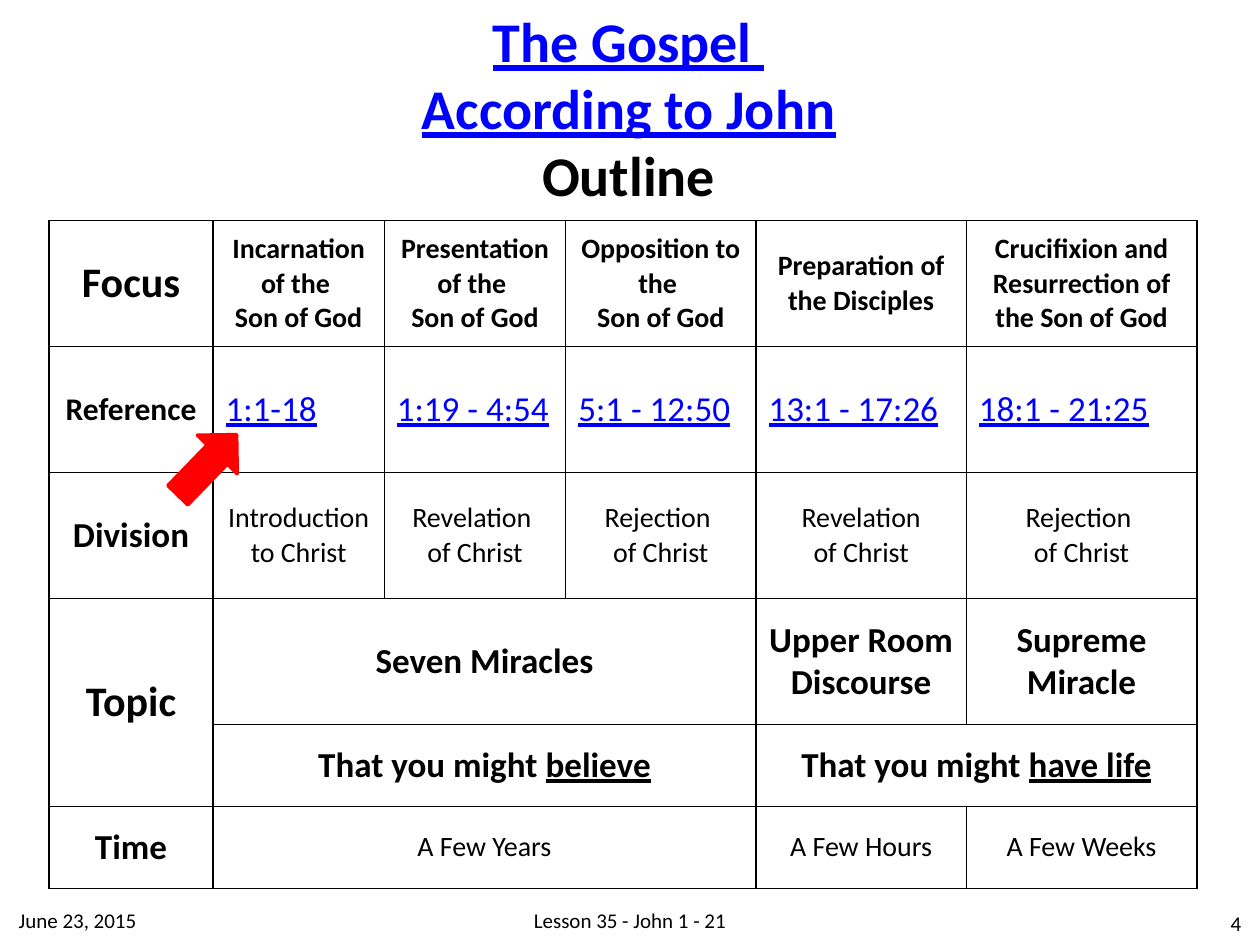
from lxml import etree
from pptx import Presentation
from pptx.dml.color import RGBColor
from pptx.enum.shapes import MSO_SHAPE as Shape
from pptx.enum.text import MSO_ANCHOR as Anchor, PP_ALIGN as Align
from pptx.oxml.ns import qn
from pptx.util import Inches, Pt

COLORS = {"text": "000000", "link": "0000FF", "border": "000000", "arrow": "FF0000"}
FONT = "Calibri"

TITLE = [("The Gospel ", "link"), ("According to John", "link"), ("Outline", "text")]

COLUMN_WIDTHS = [1.3, 1.36, 1.44, 1.51, 1.67, 1.83]
ROW_HEIGHTS = [1, 1, 1, 1, 0.65, 0.65]

ROW_LABELS = [(0, "Focus", 24), (1, "Reference", 18), (2, "Division", 20),
              (3, "Topic", 24), (5, "Time", 20)]
FOCUS = ["Incarnation of the \nSon of God", "Presentation of the \nSon of God",
         "Opposition to the \nSon of God", "Preparation of the Disciples",
         "Crucifixion and Resurrection of the Son of God"]
REFERENCES = ["1:1-18", "1:19 - 4:54", "5:1 - 12:50", "13:1 - 17:26", "18:1 - 21:25"]
DIVISIONS = ["Introduction to Christ", "Revelation \nof Christ", "Rejection \nof Christ",
             "Revelation\nof Christ", "Rejection \nof Christ"]
TOPICS = [(1, "Seven Miracles"), (4, "Upper Room Discourse"), (5, "Supreme Miracle")]
PURPOSES = [(1, "believe"), (4, "have life")]
TIMES = [(1, "A Few Years"), (4, "A Few Hours"), (5, "A Few Weeks")]
MERGES = [((3, 0), (4, 0)), ((3, 1), (3, 3)), ((4, 1), (4, 3)),
          ((4, 4), (4, 5)), ((5, 1), (5, 3))]

FOOTER = [("4", 9.2, 7.13, 0.75, Align.RIGHT),
          ("Lesson 35 - John 1 - 21", 1.71, 7.1, 6.58, Align.CENTER),
          ("June 23, 2015", 0.05, 7.1, 2.03, Align.LEFT)]


def color(name):
    return RGBColor.from_string(COLORS[name])


def format_run(run, size, bold=False, name="text", underline=False):
    font = run.font
    font.name, font.size, font.bold, font.underline = FONT, Pt(size), bold, underline
    font.color.rgb = color(name)


def write_cell(row, column, text, size, bold=False, name="text", align=Align.CENTER):
    text_frame = table.cell(row, column).text_frame
    text_frame.text = text
    for paragraph in text_frame.paragraphs:
        paragraph.alignment = align
        for run in paragraph.runs:
            format_run(run, size, bold, name, underline=name == "link")


def style_cell(cell):
    cell.vertical_anchor = Anchor.MIDDLE
    properties = cell._tc.get_or_add_tcPr()
    for side in ("lnL", "lnR", "lnT", "lnB"):
        line = etree.SubElement(properties, qn(f"a:{side}"), w=str(Pt(1)))
        fill = etree.SubElement(line, qn("a:solidFill"))
        etree.SubElement(fill, qn("a:srgbClr"), val=COLORS["border"])
    cell.fill.background()


presentation = Presentation()
presentation.slide_width, presentation.slide_height = Inches(10), Inches(7.5)
slide = presentation.slides.add_slide(presentation.slide_layouts[6])

title = slide.shapes.add_textbox(Inches(3.18), 0, Inches(3.62), Inches(1.72)).text_frame
title.word_wrap = False
title.text = "\n".join(text for text, _ in TITLE)
for paragraph, (_, name) in zip(title.paragraphs, TITLE):
    paragraph.alignment = Align.CENTER
    format_run(paragraph.runs[0], 32, True, name, underline=name == "link")

table = slide.shapes.add_table(
    len(ROW_HEIGHTS), len(COLUMN_WIDTHS), Inches(0.39), Inches(1.75),
    Inches(sum(COLUMN_WIDTHS)), Inches(sum(ROW_HEIGHTS))).table
table.first_row = table.horz_banding = False
for column, width in zip(table.columns, COLUMN_WIDTHS):
    column.width = Inches(width)
for row, height in zip(table.rows, ROW_HEIGHTS):
    row.height = Inches(height)
for cell in table.iter_cells():
    style_cell(cell)
for (top, left), (bottom, right) in MERGES:
    table.cell(top, left).merge(table.cell(bottom, right))

for row, text, size in ROW_LABELS:
    write_cell(row, 0, text, size, bold=True)
for column, (focus, reference, division) in enumerate(zip(FOCUS, REFERENCES, DIVISIONS), 1):
    write_cell(0, column, focus, 16, bold=True)
    write_cell(1, column, reference, 20, name="link", align=Align.LEFT)
    write_cell(2, column, division, 16)
for column, text in TOPICS:
    write_cell(3, column, text, 20, bold=True)
for column, text in PURPOSES:
    write_cell(4, column, "That you might ", 20, bold=True)
    run = table.cell(4, column).text_frame.paragraphs[0].add_run()
    run.text = text
    format_run(run, 20, True, underline=True)
for column, text in TIMES:
    write_cell(5, column, text, 16)

for text, left, top, width, align in FOOTER:
    text_frame = slide.shapes.add_textbox(
        Inches(left), Inches(top), Inches(width), Inches(0.4)).text_frame
    text_frame.word_wrap = True
    text_frame.vertical_anchor = Anchor.MIDDLE
    text_frame.text = text
    paragraph = text_frame.paragraphs[0]
    paragraph.alignment = align
    format_run(paragraph.runs[0], 12)

arrow = slide.shapes.add_shape(
    Shape.RIGHT_ARROW, Inches(1.31), Inches(3.47), Inches(0.67), Inches(0.44))
arrow.rotation = 314.1
arrow.shadow.inherit = False
arrow.fill.solid()
arrow.fill.fore_color.rgb = color("arrow")
arrow.line.color.rgb = color("arrow")
arrow.line.width = Pt(2)

presentation.save("out.pptx")
